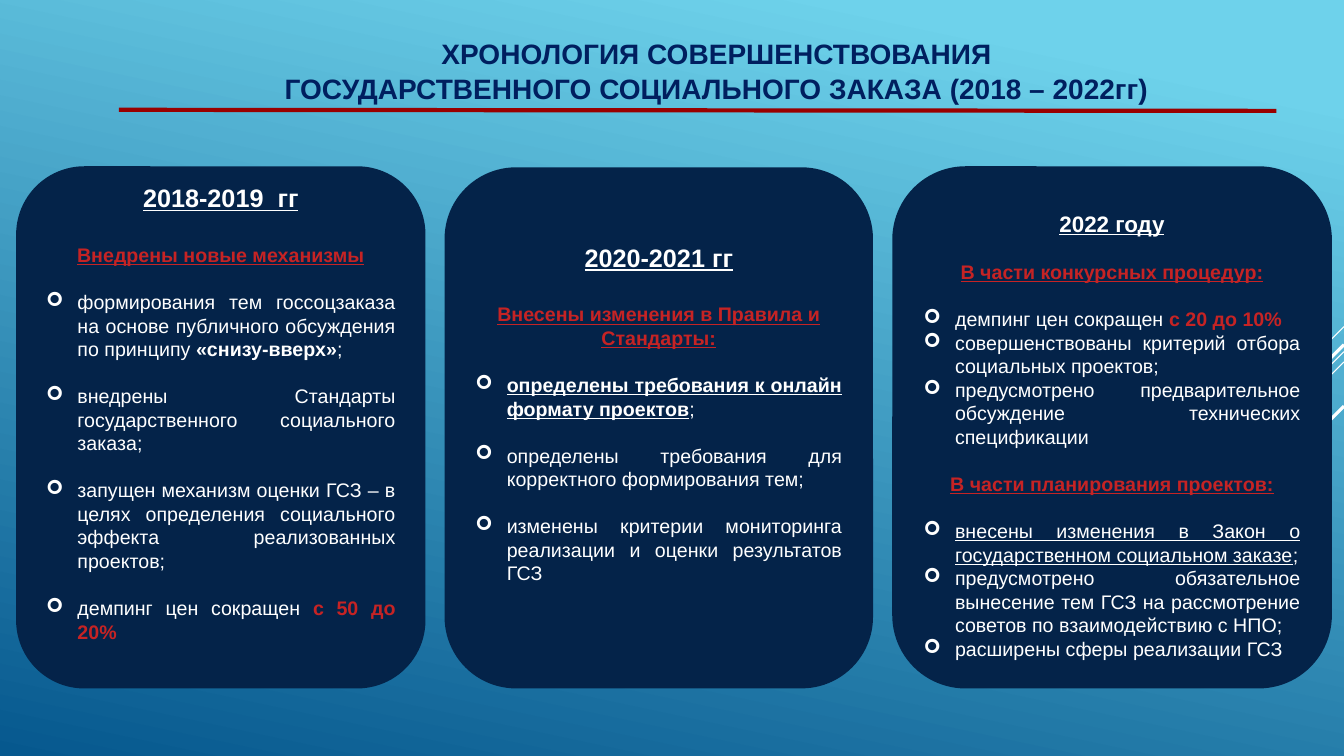
from dataclasses import dataclass

from lxml.etree import SubElement
from pptx import Presentation
from pptx.dml.color import RGBColor
from pptx.enum.shapes import MSO_CONNECTOR, MSO_SHAPE
from pptx.enum.text import MSO_ANCHOR, PP_ALIGN
from pptx.oxml.ns import qn
from pptx.util import Emu, Inches, Pt

WIDE, HIGH = Inches(13.33), Inches(7.5)
NAVY, RED, WHITE = "042349", "C62324", "FFFFFF"
FACE = "Arial"


@dataclass(frozen=True)
class Bit:
    """A run of text with its look."""
    text: str
    color: str = WHITE
    bold: bool = False
    under: bool = False


@dataclass(frozen=True)
class Line:
    """A paragraph: its runs, the space above it, its size and bullet."""
    bits: tuple[Bit, ...]
    gap: float = 0
    size: int = 14
    mark: bool = True


@dataclass(frozen=True)
class Panel:
    """A rounded panel; all lengths are percent of the slide."""
    left: float
    top: float
    wide: float
    high: float
    head: float
    foot: float
    lines: tuple[Line, ...]


@dataclass(frozen=True)
class Ray:
    """A diagonal from the right edge; row and run are percent of the height."""
    row: float
    run: float
    width: float


def col(share: float) -> Emu:
    """Turn percent of the slide width into a length."""
    return Emu(round(WIDE * share / 100))


def row(share: float) -> Emu:
    """Turn percent of the slide height into a length."""
    return Emu(round(HIGH * share / 100))


def tint(code: str) -> RGBColor:
    """Turn a hex string into a colour."""
    return RGBColor.from_string(code)


def year(text: str, size: int) -> Line:
    """Make the underlined period of a panel."""
    return Line((Bit(text, bold=True, under=True),), 0, size, False)


def head(text: str, gap: float) -> Line:
    """Make a red underlined heading."""
    return Line((Bit(text, RED, True, True),), gap, 14, False)


def item(*bits: Bit | str, gap: float = 0) -> Line:
    """Make a bulleted line, where bare strings are plain runs."""
    return Line(tuple(Bit(b) if isinstance(b, str) else b for b in bits), gap)


STEP = 16.8
PANELS = (
    Panel(1.2, 22, 30.46, 69.07, 0, 3.87, (
        year("2018-2019  гг", 18),
        head("Внедрены новые механизмы", 21.6),
        item("формирования тем госсоцзаказа на основе публичного обсуждения по принципу ",
             Bit("«снизу-вверх»", bold=True), ";", gap=STEP),
        item("внедрены Стандарты государственного социального заказа;", gap=STEP),
        item("запущен механизм оценки ГСЗ – в целях определения социального эффекта "
             "реализованных проектов;", gap=STEP),
        item("демпинг цен сокращен ", Bit("с 50 до 20%", RED, True), gap=STEP))),
    Panel(33.08, 22.13, 31.88, 68.93, 0.67, 4.53, (
        year("2020-2021 гг", 18),
        head("Внесены изменения в Правила и Стандарты:", 21.6),
        item(Bit("определены требования к онлайн формату проектов", bold=True, under=True),
             ";", gap=STEP),
        item("определены требования для корректного формирования тем;", gap=STEP),
        item("изменены критерии мониторинга реализации и оценки результатов ГСЗ", gap=STEP))),
    Panel(66.39, 22, 32.71, 69.07, 2.67, 0.67, (
        year("2022 году", 16),
        head("В части конкурсных процедур:", STEP),
        item("демпинг цен сокращен ", Bit("с 20 до 10%", RED, True), gap=STEP),
        item("совершенствованы критерий отбора социальных проектов;"),
        item("предусмотрено предварительное обсуждение технических спецификации"),
        head("В части планирования проектов:", STEP),
        item(Bit("внесены изменения в Закон о государственном социальном заказе", under=True),
             ";", gap=STEP),
        item("предусмотрено обязательное вынесение тем ГСЗ на рассмотрение советов "
             "по взаимодействию с НПО;"),
        item("расширены сферы реализации ГСЗ"))),
)
RAYS = (Ray(43.2, 13.33, 0.75), Ray(46.53, 43.47, 0.75), Ray(47.87, 27.67, 0.75),
        Ray(45.6, 25.47, 2.25), Ray(53.73, 18.53, 2.25))


def stroke(slide, start: tuple, end: tuple, color: str, width: float) -> None:
    """Draw a straight line without a shadow."""
    line = slide.shapes.add_connector(MSO_CONNECTOR.STRAIGHT, *start, *end)
    line.line.color.rgb = tint(color)
    line.line.width = Pt(width)
    SubElement(line._element.spPr, qn("a:effectLst"))


def style(font, bit: Bit) -> None:
    """Give a font the look of a run."""
    font.bold, font.underline = bit.bold, bit.under
    font.color.rgb = tint(bit.color)


def write(para, line: Line) -> None:
    """Fill a paragraph from its line."""
    para.alignment = PP_ALIGN.JUSTIFY if line.mark else PP_ALIGN.CENTER
    if line.mark:
        props = para._p.get_or_add_pPr()
        props.set("marL", str(col(2.34)))
        props.set("indent", str(-col(2.34)))
        SubElement(props, qn("a:buFont"), typeface="Wingdings")
        SubElement(props, qn("a:buChar"), char="➢")
    para.space_before = Pt(line.gap)
    para.font.name, para.font.size = FACE, Pt(line.size)
    if len(line.bits) == 1:
        style(para.font, line.bits[0])
    for bit in line.bits:
        run = para.add_run()
        run.text = bit.text
        if len(line.bits) > 1:
            style(run.font, bit)


def draw(slide, panel: Panel) -> None:
    """Draw one panel with its text."""
    shape = slide.shapes.add_shape(MSO_SHAPE.ROUNDED_RECTANGLE, col(panel.left), row(panel.top),
                                   col(panel.wide), row(panel.high))
    shape.shadow.inherit = False
    shape.fill.solid()
    shape.fill.fore_color.rgb = tint(NAVY)
    shape.line.fill.background()
    frame = shape.text_frame
    frame.word_wrap = True
    frame.vertical_anchor = MSO_ANCHOR.MIDDLE
    frame.margin_top, frame.margin_bottom = row(panel.head), row(panel.foot)
    for spot, line in enumerate(panel.lines):
        write(frame.add_paragraph() if spot else frame.paragraphs[0], line)


def name(slide) -> None:
    """Place and format the title."""
    title = slide.shapes.title
    title.left, title.top, title.width, title.height = col(9.98), row(4.8), col(86.65), row(9.33)
    frame = title.text_frame
    frame.margin_left = frame.margin_right = frame.margin_top = frame.margin_bottom = 0
    frame.vertical_anchor = MSO_ANCHOR.TOP
    frame.text = ("ХРОНОЛОГИЯ СОВЕРШЕНСТВОВАНИЯ\n"
                  "ГОСУДАРСТВЕННОГО СОЦИАЛЬНОГО ЗАКАЗА (2018 – 2022гг)")
    for para in frame.paragraphs:
        para.alignment = PP_ALIGN.CENTER
        para.space_before = Pt(1.1)
        para.font.name, para.font.size, para.font.bold = FACE, Pt(20), True
        para.font.color.rgb = tint("001F5F")


def main() -> None:
    """Build the slide and save it."""
    deck = Presentation()
    deck.slide_width, deck.slide_height = WIDE, HIGH
    slide = deck.slides.add_slide(deck.slide_layouts.get_by_name("Title Only"))
    fill = slide.background.fill
    fill.gradient()
    fill.gradient_angle = 258
    for stop, (spot, color) in zip(fill.gradient_stops, ((0.1, "6ED2EB"), (1, "06588E"))):
        stop.position, stop.color.rgb = spot, tint(color)
    for ray in RAYS:
        stroke(slide, (WIDE, row(ray.row)), (WIDE - row(ray.run), row(ray.row + ray.run)),
               WHITE, ray.width)
    name(slide)
    stroke(slide, (col(8.85), row(14.53)), (col(94.97), row(14.67)), "990000", 3)
    for panel in PANELS:
        draw(slide, panel)


    deck.save("out.pptx")


if __name__ == "__main__":
    main()
